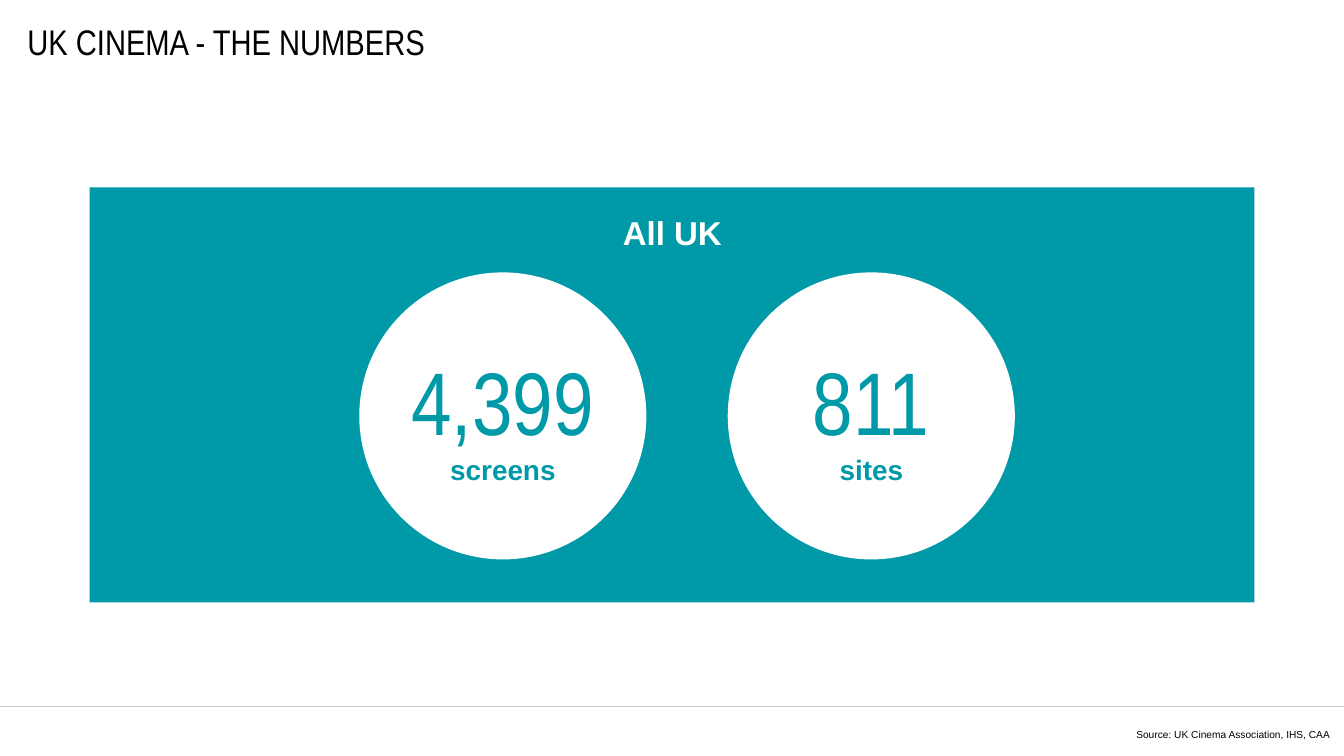
"""Build the UK cinema numbers slide."""
from dataclasses import dataclass

from lxml import etree
from pptx import Presentation
from pptx import util as u
from pptx.dml.color import RGBColor
from pptx.enum import shapes, text
from pptx.oxml.ns import qn

EMU_PER_PX = 9144
TEAL, WHITE, BLACK, RULE_GREY = "0099A8", "FFFFFF", "000000", "CAC8C8"
LEFT, CENTER, RIGHT = text.PP_ALIGN.LEFT, text.PP_ALIGN.CENTER, text.PP_ALIGN.RIGHT


@dataclass(frozen=True)
class Box:
    left: int
    top: int
    width: int
    height: int

    def emu(self) -> list[u.Emu]:
        """Return the box as EMU lengths."""
        return [px(n) for n in (self.left, self.top, self.width, self.height)]


@dataclass(frozen=True)
class Style:
    size: int
    color: str
    font: str = "Arial"
    bold: bool = False
    align: text.PP_ALIGN = CENTER
    tight: bool = True
    line_pt: int = 0


@dataclass(frozen=True)
class Figure:
    left: int
    value: str
    unit: str


TITLE = Style(28, BLACK, "Arial Narrow", align=LEFT)
REGION = Style(26, WHITE, bold=True, tight=False)
VALUE = Style(70, TEAL, "Arial Narrow")
UNIT = Style(22, TEAL, bold=True, tight=False, line_pt=15)
SOURCE = Style(8, BLACK, align=RIGHT, line_pt=19)
FIGURES = [Figure(393, "4,399", "screens"), Figure(796, "811", "sites")]


def px(length: int) -> u.Emu:
    """Turn pixels into EMU."""
    return u.Emu(length * EMU_PER_PX)


def rgb(color: str) -> RGBColor:
    """Turn a hex string into a colour."""
    return RGBColor.from_string(color)


def add_area(parent, kind: shapes.MSO_SHAPE, box: Box, color: str) -> None:
    """Draw a plain filled shape."""
    area = parent.add_shape(kind, *box.emu())
    area.shadow.inherit = False
    area.fill.solid()
    area.fill.fore_color.rgb = rgb(color)
    area.line.fill.background()


def add_words(parent, box: Box, words: str, style: Style) -> None:
    """Write one styled line of text."""
    frame = parent.add_textbox(*box.emu()).text_frame
    frame.word_wrap = True
    if style.tight:
        frame.margin_left = frame.margin_right = 0
        frame.margin_top = frame.margin_bottom = 0
        frame.vertical_anchor = text.MSO_ANCHOR.MIDDLE
    line = frame.paragraphs[0]
    line.text = words
    line.alignment = style.align
    if style.line_pt:
        line.line_spacing = u.Pt(style.line_pt)
    font = line.runs[0].font
    font.name, font.size, font.bold = style.font, u.Pt(style.size), style.bold
    font.color.rgb = rgb(style.color)


def add_figure(parent, figure: Figure) -> None:
    """Draw a circle holding a value and its unit."""
    group = parent.add_group_shape().shapes
    add_area(group, shapes.MSO_SHAPE.OVAL, Box(figure.left, 298, 314, 314), WHITE)
    add_words(group, Box(figure.left + 51, 409, 211, 58), figure.value, VALUE)
    add_words(group, Box(figure.left + 26, 506, 262, 53), figure.unit, UNIT)


def add_footer_rule(parent, top: int, width: int) -> None:
    """Draw the thin line above the footer."""
    rule = parent.add_connector(
        shapes.MSO_CONNECTOR.STRAIGHT, 0, px(top), px(width), px(top))
    rule.line.color.rgb = rgb(RULE_GREY)
    rule.line.width = u.Pt(0.5)
    etree.SubElement(rule._element.spPr, qn("a:effectLst"))


def main() -> None:
    """Build and save the slide."""
    deck = Presentation()
    deck.slide_width, deck.slide_height = px(1470), px(827)
    canvas = deck.slides.add_slide(deck.slide_layouts[6]).shapes
    add_footer_rule(canvas, 773, 1470)
    add_words(canvas, Box(30, 30, 1358, 31), "UK CINEMA - THE NUMBERS", TITLE)
    add_area(canvas, shapes.MSO_SHAPE.RECTANGLE, Box(98, 205, 1274, 454), TEAL)
    for figure in FIGURES:
        add_figure(canvas, figure)
    add_words(canvas, Box(324, 228, 823, 54), "All UK", REGION)
    add_words(canvas, Box(1114, 785, 341, 23),
              "Source: UK Cinema Association, IHS, CAA", SOURCE)
    deck.save("out.pptx")


if __name__ == "__main__":
    main()
